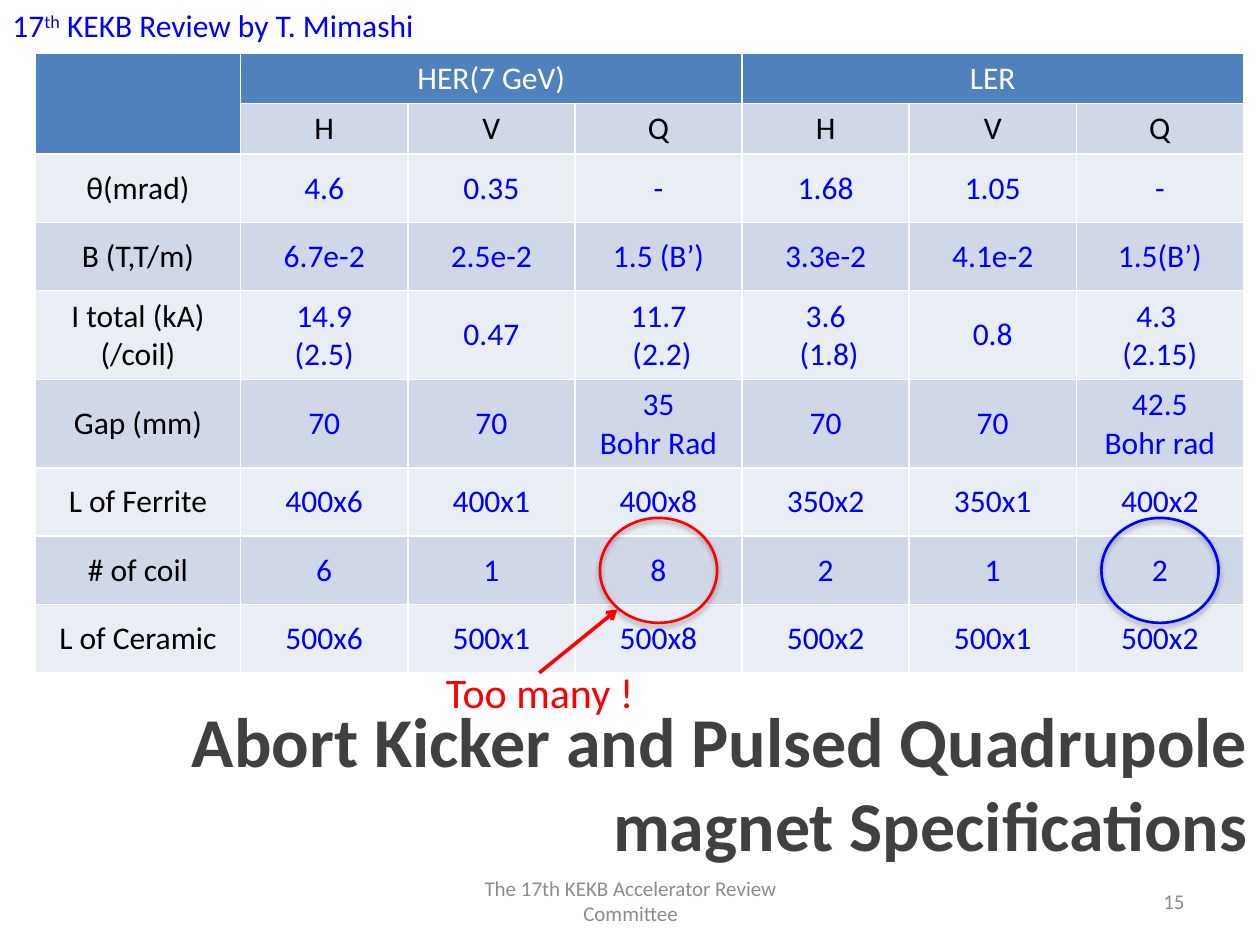
from lxml.etree import SubElement
from pptx import Presentation
from pptx.dml.color import RGBColor
from pptx.enum.shapes import MSO_CONNECTOR, MSO_SHAPE
from pptx.enum.text import MSO_ANCHOR, PP_ALIGN
from pptx.oxml import parse_xml
from pptx.oxml.ns import nsdecls, qn
from pptx.util import Inches, Pt

WHITE = RGBColor(0xFF, 0xFF, 0xFF)
BLACK = RGBColor(0, 0, 0)
BLUE = RGBColor(0, 0, 0xFF)
RED = RGBColor(0xFF, 0, 0)
GRAY = RGBColor(0x8C, 0x8C, 0x8C)
TITLE_GRAY = RGBColor(0x40, 0x40, 0x40)
HEADER_FILL = RGBColor(0x4F, 0x81, 0xBD)
BAND_FILLS = [RGBColor(0xE9, 0xED, 0xF4), RGBColor(0xD0, 0xD8, 0xE8)]

prs = Presentation()
prs.slide_width, prs.slide_height = Inches(10), Inches(7.5)
slide = prs.slides.add_slide(prs.slide_layouts[6])
# One percent of the slide's width and height
X, Y = prs.slide_width / 100, prs.slide_height / 100


def add_run(paragraph, text, size, color, bold=False):
    run = paragraph.add_run()
    run.text = text
    run.font.name = "Calibri"
    run.font.size = Pt(size)
    run.font.bold = bold
    run.font.color.rgb = color
    return run


def add_label(left, top, width, height, align=PP_ALIGN.LEFT, anchor=MSO_ANCHOR.TOP, wrap=True):
    """Add a text box placed in percent of the slide and return its first paragraph."""
    box = slide.shapes.add_textbox(int(left * X), int(top * Y), int(width * X), int(height * Y))
    box.text_frame.word_wrap = wrap
    box.text_frame.vertical_anchor = anchor
    paragraph = box.text_frame.paragraphs[0]
    paragraph.alignment = align
    return paragraph


title = add_label(2.8, 73.2, 97.2, 21.1, PP_ALIGN.RIGHT)
add_run(title, "Abort Kicker and Pulsed Quadrupole magnet Specifications", 40, TITLE_GRAY, True)

# Specification table
specs = [
    ["", "HER(7 GeV)", "", "", "LER", "", ""],
    ["", "H", "V", "Q", "H", "V", "Q"],
    ["θ(mrad)", "4.6", "0.35", "-", "1.68", "1.05", "-"],
    ["B (T,T/m)", "6.7e-2", "2.5e-2", "1.5 (B’)", "3.3e-2", "4.1e-2", "1.5(B’)"],
    ["I total (kA)\n(/coil)", "14.9\n(2.5)", "0.47", "11.7\n (2.2)", "3.6\n (1.8)", "0.8", "4.3 \n(2.15)"],
    ["Gap (mm)", "70", "70", "35\nBohr Rad", "70", "70", "42.5\nBohr rad"],
    ["L of Ferrite", "400x6", "400x1", "400x8", "350x2", "350x1", "400x2"],
    ["# of coil", "6", "1", "8", "2", "1", "2"],
    ["L of Ceramic", "500x6", "500x1", "500x8", "500x2", "500x1", "500x2"],
]
table_left, table_top = 2.8 * X, 5.6 * Y
table_width, table_height = 95.9 * X, 65.6 * Y
label_width = 16.3 * X
value_width = (table_width - label_width) / 6
row_weights = [0.4] * 2 + [0.54] * 2 + [0.7] * 2 + [0.54] * 3
row_heights = [table_height * weight / sum(row_weights) for weight in row_weights]

table = slide.shapes.add_table(
    len(specs), 7, int(table_left), int(table_top), int(table_width), int(table_height)
).table
for index, column in enumerate(table.columns):
    column.width = int(value_width if index else label_width)
for row, height in zip(table.rows, row_heights):
    row.height = int(height)
table.cell(0, 0).merge(table.cell(1, 0))
table.cell(0, 1).merge(table.cell(0, 3))
table.cell(0, 4).merge(table.cell(0, 6))

for r, spec_row in enumerate(specs):
    for c, text in enumerate(spec_row):
        cell = table.cell(r, c)
        is_header = r == 0 or (r == 1 and c == 0)
        color = WHITE if is_header else BLACK if r == 1 or c == 0 else BLUE
        cell.vertical_anchor = MSO_ANCHOR.MIDDLE if r > 1 else MSO_ANCHOR.TOP
        for n, line in enumerate(text.split("\n") if text else []):
            frame = cell.text_frame
            paragraph = frame.add_paragraph() if n else frame.paragraphs[0]
            paragraph.alignment = PP_ALIGN.CENTER
            add_run(paragraph, line, 18, color)
        for side in ("lnL", "lnR", "lnT", "lnB"):
            border = SubElement(cell._tc.get_or_add_tcPr(), qn(f"a:{side}"), w=str(Pt(1)))
            border_fill = SubElement(border, qn("a:solidFill"))
            SubElement(border_fill, qn("a:srgbClr"), val=str(WHITE))
        cell.fill.solid()
        cell.fill.fore_color.rgb = HEADER_FILL if is_header else BAND_FILLS[r % 2]

# Footer and heading
page_number = add_label(71.7, 92.7, 23.3, 5.3, PP_ALIGN.RIGHT, MSO_ANCHOR.MIDDLE)
add_run(page_number, "15", 12, GRAY)
footer = add_label(34.2, 92.7, 31.7, 5.3, PP_ALIGN.CENTER, MSO_ANCHOR.MIDDLE)
add_run(footer, "The 17th KEKB Accelerator Review Committee", 12, GRAY)
review = add_label(0, 0, 34.7, 5.3, wrap=False)
add_run(review, "17", 18, BLUE)
ordinal = add_run(review, "th", 18, BLUE)
ordinal.font._element.set("baseline", "30000")
add_run(review, " KEKB Review by T. Mimashi", 18, BLUE)

# Rings around the coil counts of both Q columns
ring_width, ring_height = 9.3 * X, 11.1 * Y
coil_middle = table_top + sum(row_heights[:7]) + row_heights[7] / 2
for q_column, ring_color in ((2, RED), (5, BLUE)):
    q_middle = table_left + label_width + (q_column + 0.5) * value_width
    ring = slide.shapes.add_shape(
        MSO_SHAPE.OVAL, int(q_middle - ring_width / 2), int(coil_middle - ring_height / 2),
        int(ring_width), int(ring_height))
    ring.fill.background()
    ring.line.color.rgb = ring_color
    ring.line.width = Pt(1.5)
    ring.shadow.inherit = False
    effects = ring._element.spPr.find(qn("a:effectLst"))
    effects.append(parse_xml(
        f'<a:outerShdw {nsdecls("a")} blurRad="{Pt(3.1)}" dist="{Pt(1.8)}" dir="5400000" '
        'rotWithShape="0"><a:srgbClr val="000000"><a:alpha val="35000"/></a:srgbClr></a:outerShdw>'))

# Remark on the HER coil count
remark = add_label(34.4, 69.9, 17.4, 6.7, wrap=False)
add_run(remark, "Too many !", 24, RED)
arrow = slide.shapes.add_connector(
    MSO_CONNECTOR.STRAIGHT, int(42.8 * X), int(71.2 * Y), int(49 * X), int(64.5 * Y))
arrow.line.color.rgb = RED
arrow.line.width = Pt(2)
SubElement(arrow.line._get_or_add_ln(), qn("a:tailEnd"), type="arrow")
SubElement(arrow._element.spPr, qn("a:effectLst"))

prs.save("out.pptx")
